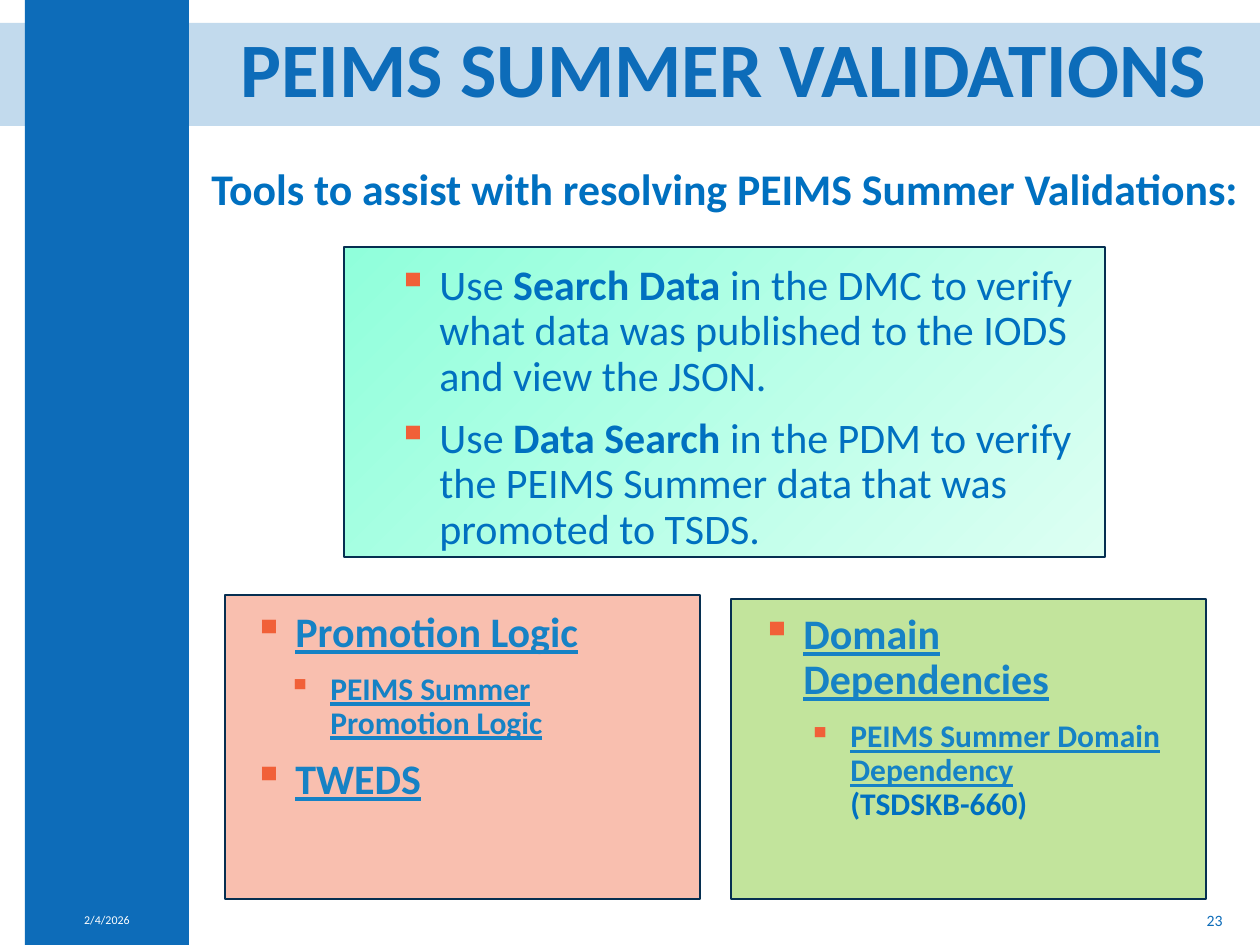
from lxml.etree import SubElement
from pptx import Presentation
from pptx.dml.color import RGBColor
from pptx.enum.shapes import MSO_SHAPE as Shape
from pptx.enum.text import MSO_ANCHOR as Anchor, MSO_AUTO_SIZE as AutoSize, PP_ALIGN as Align
from pptx.oxml.ns import qn
from pptx.util import Emu, Pt

PX_PER_INCH = 126
NAVY, BRAND, BLUE, LINK = "062F51", "0D6CB9", "0070C0", "1682C5"
ORANGE, WHITE = "F16038", "FFFFFF"
HANGING = 42


def px(length):
    return Emu(round(length * 914400 / PX_PER_INCH))


def rgb(value):
    return RGBColor.from_string(value)


class SlideBuilder:
    """Holds the text style and the slide being filled."""

    font = "Calibri"

    def __init__(self, deck):
        self.slide = deck.slides.add_slide(deck.slide_layouts[5])

    def style(self, span, size, color, bold=False, underline=False):
        font = span.font
        font.name, font.size, font.bold = self.font, Pt(size), bold
        font.underline = underline
        font.color.rgb = rgb(color)

    def panel(self, left, top, width, height, color, end_color=None, line=None, alpha=None):
        """Add a rectangle; end_color makes a diagonal gradient, alpha is a percentage."""
        box = self.slide.shapes.add_shape(
            Shape.RECTANGLE, px(left), px(top), px(width), px(height))
        box.shadow.inherit = False
        if end_color:
            box.fill.gradient()
            box.fill.gradient_angle = 315
            for stop, value in zip(box.fill.gradient_stops, (color, end_color)):
                stop.color.rgb = rgb(value)
        else:
            box.fill.solid()
            box.fill.fore_color.rgb = rgb(color)
        if alpha:
            fill_color = box._element.spPr.find(qn("a:solidFill"))[0]
            SubElement(fill_color, qn("a:alpha"), val=str(alpha * 1000))
        if line:
            box.line.color.rgb = rgb(line)
            box.line.width = Pt(1)
        else:
            box.line.fill.background()

    def title(self, left, top, width, height, text):
        box = self.slide.shapes.title
        box.left, box.top, box.width, box.height = map(px, (left, top, width, height))
        frame = box.text_frame
        frame.text = text
        frame.auto_size = AutoSize.NONE
        frame.vertical_anchor = Anchor.MIDDLE
        para = frame.paragraphs[0]
        para.alignment, para.line_spacing = Align.CENTER, 0.9
        self.style(para.runs[0], 44, BRAND, bold=True)

    def text_frame(self, left, top, width, height, anchor=Anchor.TOP):
        box = self.slide.shapes.add_textbox(px(left), px(top), px(width), px(height))
        frame = box.text_frame
        frame.word_wrap = True
        frame.vertical_anchor = anchor
        return frame

    def label(self, left, top, width, height, text, size, color, align, bold=False):
        frame = self.text_frame(left, top, width, height, Anchor.MIDDLE)
        frame.text = text
        para = frame.paragraphs[0]
        para.alignment = align
        self.style(para.runs[0], size, color, bold)
        return frame

    def bullets(self, left, top, width, height, items):
        """Fill a box from (level, indent, size, spans); a span is (text, color, bold, underline)."""
        frame = self.text_frame(left, top, width, height)
        for index, (level, indent, size, spans) in enumerate(items):
            para = frame.add_paragraph() if index else frame.paragraphs[0]
            self.add_bullet(para, indent)
            para.level = level
            para.line_spacing = 0.9
            para.space_before = Pt(2.8 if index else 0)
            para.space_after = Pt(6.8)
            for text, *look in spans:
                span = para.add_run()
                span.text = text
                self.style(span, size, *look)

    def add_bullet(self, para, indent):
        properties = para._p.get_or_add_pPr()
        properties.set("marL", str(px(indent)))
        properties.set("indent", str(px(-HANGING)))
        color = SubElement(properties, qn("a:buClr"))
        SubElement(color, qn("a:srgbClr"), val=ORANGE)
        SubElement(properties, qn("a:buChar"), char="▪")


def tool_item(name, purpose):
    return 2, 83, 24, [("Use", BLUE), (f" {name} ", BLUE, True), (purpose, BLUE)]


def link(text):
    return text, LINK, True, True


def main():
    deck = Presentation()
    deck.slide_width, deck.slide_height = px(1260), px(945)
    page = SlideBuilder(deck)

    page.panel(0, 23, 1260, 103, BRAND, alpha=25)
    page.panel(25, 0, 164, 945, BRAND)
    page.title(225, 21, 998, 103, "PEIMS SUMMER VALIDATIONS")
    page.label(189, 155, 1071, 66, "Tools to assist with resolving PEIMS Summer Validations:",
               25, BLUE, Align.CENTER, bold=True)

    page.panel(344, 247, 761, 310, "90FFDB", end_color="DDFFF3", line=NAVY)
    page.bullets(344, 258, 775, 299, [
        tool_item("Search Data", "in the DMC to verify what data was published "
                  "to the IODS and view the JSON."),
        tool_item("Data Search", "in the PDM to verify the PEIMS Summer data "
                  "that was promoted to TSDS."),
    ])

    page.panel(225, 595, 475, 304, "F9BFAF", line=NAVY)
    page.bullets(200, 605, 467, 319, [
        (3, 83, 24, [link("Promotion Logic")]),
        (4, 118, 18, [link("PEIMS Summer Promotion Logic")]),
        (3, 83, 24, [link("TWEDS")]),
    ])

    page.panel(731, 599, 475, 300, "C2E49C", line=NAVY)
    page.bullets(708, 607, 467, 271, [
        (3, 83, 24, [link("Domain Dependencies")]),
        (4, 130, 18, [link("PEIMS Summer Domain Dependency"),
                      (" (TSDSKB-660)", BLUE, True)]),
    ])

    date = page.label(25, 895, 164, 50, "2/4/2026", 6.8, WHITE, Align.CENTER)
    date.margin_left = date.margin_right = px(8)
    date.margin_top = date.margin_bottom = px(4)
    page.label(951, 895, 284, 50, "23", 9, BRAND, Align.RIGHT)

    deck.save("out.pptx")


if __name__ == "__main__":
    main()
